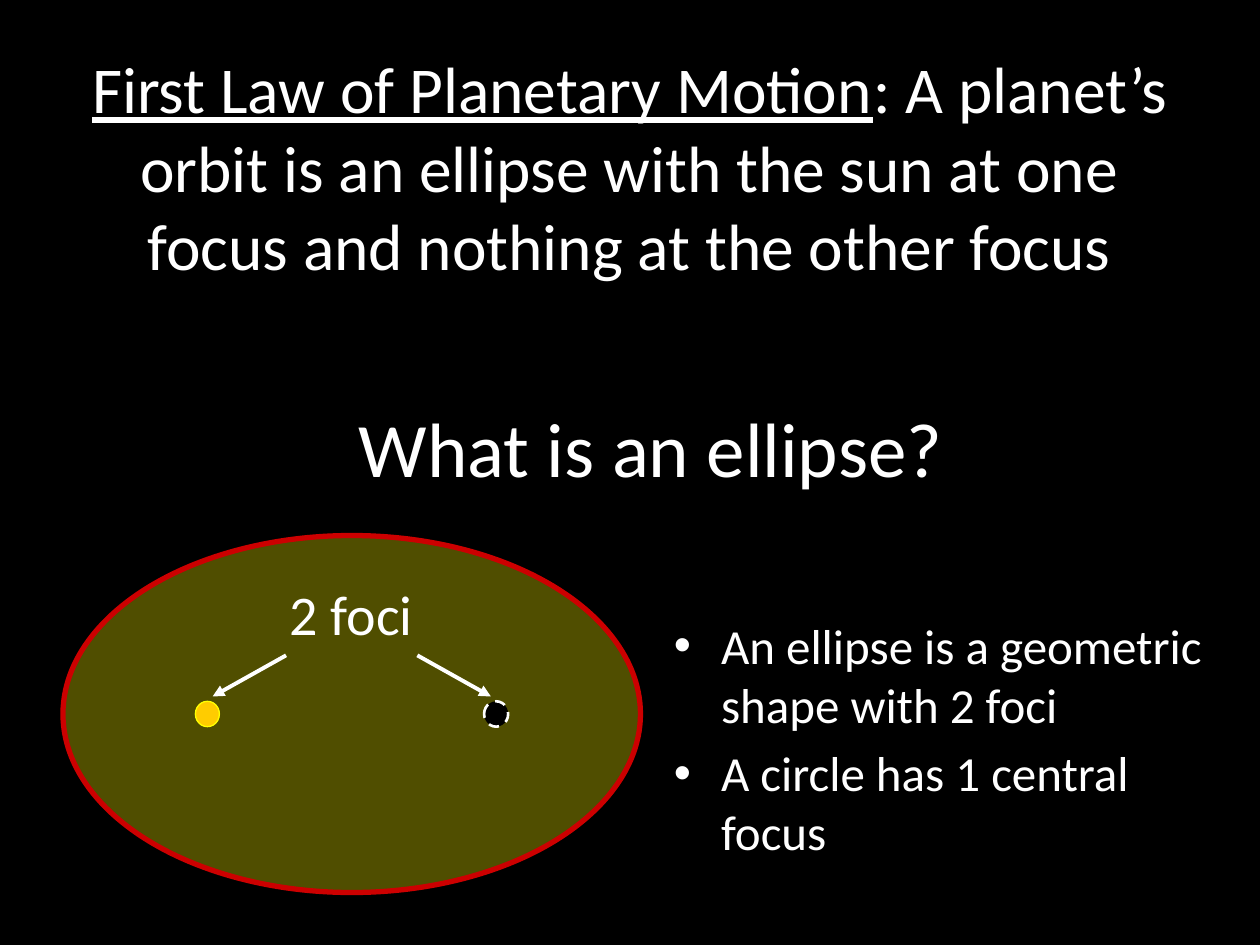
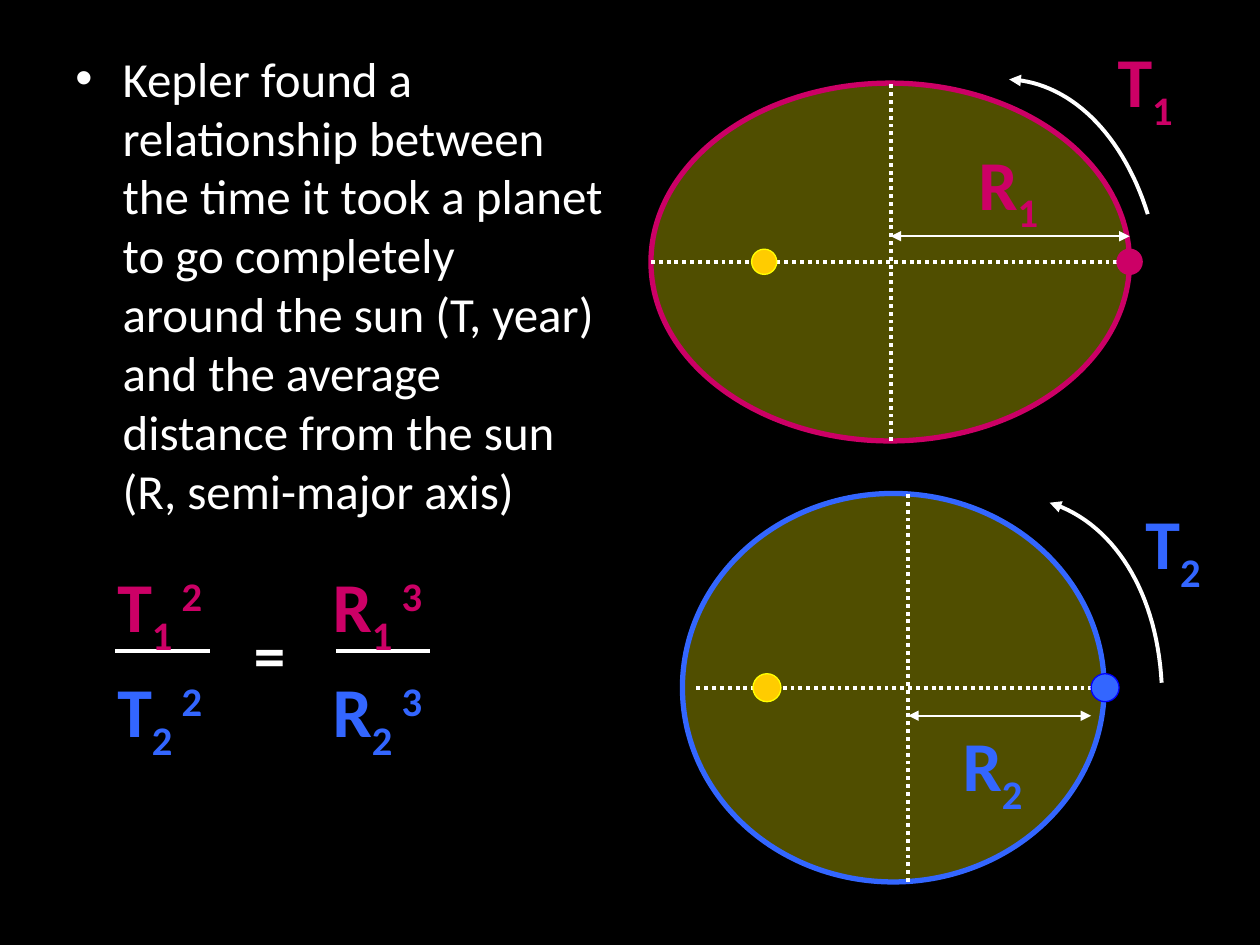
from lxml.etree import SubElement
from pptx import Presentation
from pptx.dml.color import RGBColor
from pptx.enum.dml import MSO_LINE
from pptx.enum.shapes import MSO_CONNECTOR as Link, MSO_SHAPE as Preset
from pptx.enum.text import MSO_ANCHOR as Anchor, PP_ALIGN as Align
from pptx.oxml.ns import qn
from pptx.util import Pt

COLORS = {
    "space": "000000", "white": "FFFFFF", "area": "A09C00", "ellipse": "CC0000",
    "sun": "FFCC00", "sun_edge": "FFFF00",
    "first": "CC0066", "second": "3366FF", "second_edge": "0000FF",
}
FONT = "Calibri"
SUB, SUPER = "-25000", "30000"
INDENT = 27
ARC_STEPS = 30


def rgb(name):
    return RGBColor.from_string(COLORS[name])


def decorate(shape, edge="white", width=2.25, fill=None, alpha=None, dash=None, ends=()):
    """Set outline, fill, dash and arrowheads, and take the shadow away."""
    line = shape.line
    line.color.rgb = rgb(edge)
    line.width = Pt(width)
    if dash:
        line.dash_style = dash
    for end in ends:
        SubElement(line._get_or_add_ln(), qn(f"a:{end}"), type="triangle")
    if hasattr(shape, "fill"):
        shape.shadow.inherit = False
        if fill:
            shape.fill.solid()
            shape.fill.fore_color.rgb = rgb(fill)
        else:
            shape.fill.background()
        if alpha:
            tint = shape.fill._xPr.find(qn("a:solidFill"))[0]
            SubElement(tint, qn("a:alpha"), val=str(alpha * 1000))
    else:
        SubElement(shape._element.spPr, qn("a:effectLst"))


deck = Presentation()
deck.slide_width, deck.slide_height = Pt(720), Pt(540)
pages = []
for number in range(2):
    page = deck.slides.add_slide(deck.slide_layouts[6])
    page.background.fill.solid()
    page.background.fill.fore_color.rgb = rgb("space")
    pages.append(page)
law_page, period_page = pages

# Filled areas of the three orbits
for page, edge, area in [
    (law_page, "ellipse", (36, 306, 330, 204)),
    (period_page, "second", (390, 282, 241, 222)),
    (period_page, "first", (372, 47.5, 273.5, 204.5)),
]:
    oval = page.shapes.add_shape(Preset.OVAL, *map(Pt, area))
    decorate(oval, edge, 3, "area", alpha=50)

# Axes, radius arrows, pointers to the foci and fraction bars
axis = {"dash": MSO_LINE.ROUND_DOT}
radius = {"width": 1, "ends": ("headEnd", "tailEnd")}
pointer = {"ends": ("tailEnd",)}
for page, points, look in [
    (law_page, (238.5, 374.5, 280.5, 398), pointer),
    (law_page, (163.5, 374.5, 121.5, 398), pointer),
    (period_page, (398, 393, 631.5, 393), axis),
    (period_page, (519, 504, 519, 282), axis),
    (period_page, (519, 409, 623.5, 409), radius),
    (period_page, (372, 149.8, 638.5, 149.8), axis),
    (period_page, (509, 252, 509, 47.5), axis),
    (period_page, (509, 135, 645.5, 135), radius),
    (period_page, (66, 372, 120, 372), {}),
    (period_page, (192, 372, 246, 372), {}),
]:
    line = page.shapes.add_connector(Link.STRAIGHT, *map(Pt, points))
    decorate(line, **look)

# Foci and planets: centre, width, height
for page, x, y, width, height, look in [
    (law_page, 118.5, 408, 13.75, 14.5, ("sun_edge", 0.75, "sun")),
    (law_page, 283.5, 408, 13.75, 14.5, ("white", 1.5, "space", None, MSO_LINE.DASH)),
    (period_page, 438.3, 393, 16, 16, ("sun_edge", 0.75, "sun")),
    (period_page, 631.5, 393, 16, 16, ("second_edge", 0.75, "second")),
    (period_page, 436.7, 149.6, 14.4, 14.4, ("sun_edge", 0.75, "sun")),
    (period_page, 645.5, 149.6, 14.4, 14.4, ("first", 0.75, "first")),
]:
    dot = page.shapes.add_shape(
        Preset.OVAL, Pt(x - width / 2), Pt(y - height / 2), Pt(width), Pt(height))
    decorate(dot, *look)

# Direction of travel, each a cubic curve through four control points
for controls in [
    ((663.8, 390.2), (661, 338.4), (636.5, 298.8), (599.8, 287.3)),
    ((655.9, 122.4), (641.5, 76.3), (611.3, 46.8), (576.7, 45.4)),
]:
    curve = []
    for step in range(ARC_STEPS + 1):
        t = step / ARC_STEPS
        weights = ((1 - t) ** 3, 3 * t * (1 - t) ** 2, 3 * t * t * (1 - t), t ** 3)
        curve.append([Pt(sum(w * c[i] for w, c in zip(weights, controls))) for i in (0, 1)])
    builder = period_page.shapes.build_freeform(*curve[0], scale=1.0)
    builder.add_line_segments(curve[1:], close=False)
    decorate(builder.convert_to_shape(), ends=("tailEnd",))

# Text: page, area, paragraphs of (text, extra format) spans, look
bullet = {"size": 28, "bullet": True}
center = {"align": Align.CENTER, "anchor": Anchor.MIDDLE}
first = {"size": 40, "bold": True, "color": "first"}
second = first | {"color": "second"}
sub, raised = {"baseline": SUB}, {"baseline": SUPER}
texts = [
    (law_page, (36, 30, 648, 162), [[
        ("First Law of Planetary Motion", {"underline": True}),
        (": A planet’s orbit is an ellipse with the sun at one focus "
         "and nothing at the other focus", {})]],
     center | {"size": 37.4, "bottom": 36}),
    (law_page, (48, 210, 648, 90), [[("What is an ellipse?", {})]], center | {"size": 44}),
    (law_page, (378, 348, 318, 162), [
        [("An ellipse is a geometric shape with 2 foci", {})],
        [("A circle has 1 central focus", {})]], bullet),
    (law_page, (146, 327.5, 117, 56), [[("2 foci ", {})]], {"size": 32, "align": Align.CENTER}),
    (period_page, (36, 24, 318, 492), [[
        ("Kepler found a relationship between the time it took a planet to go completely "
         "around the sun (T, year) and the average distance from the sun "
         "(R, semi-major axis)", {})]], bullet),
    (period_page, (138, 348, 30, 51), [[("=", {})]], {"size": 36, "bold": True}),
]
for letter, digit, area, look in [
    ("R", "1", (552, 76.5, 72, 55.5), first),
    ("T", "1", (631.5, 18, 65, 55.5), first),
    ("R", "2", (543, 409, 81, 55.5), second),
    ("T", "2", (647.5, 282, 72.5, 55.5), second),
]:
    texts.append((period_page, area, [[(letter, {}), (digit, sub)]], look))
for digit, top, look in [("1", 318, first), ("2", 378, second)]:
    spans = [("T", {}), (f"{digit} ", sub), ("2", raised),
             ("\tR", {}), (f"{digit} ", sub), ("3", raised)]
    texts.append((period_page, (60, top, 246, 55.5), [spans], look | {"tab": 123}))

for page, area, paras, look in texts:
    frame = page.shapes.add_textbox(*map(Pt, area)).text_frame
    frame.word_wrap = True
    frame.vertical_anchor = look.get("anchor", Anchor.TOP)
    frame.margin_bottom = Pt(look.get("bottom", 3.6))
    for index, spans in enumerate(paras):
        para = frame.add_paragraph() if index else frame.paragraphs[0]
        para.alignment = look.get("align", Align.LEFT)
        if index:
            para.space_before = Pt(0.2 * look["size"])
        settings = para._p.get_or_add_pPr()
        if "bullet" in look:
            settings.set("marL", str(Pt(INDENT)))
            settings.set("indent", str(-Pt(INDENT)))
            SubElement(settings, qn("a:buFont"), typeface="Arial")
            SubElement(settings, qn("a:buChar"), char="•")
        if "tab" in look:
            tabs = SubElement(settings, qn("a:tabLst"))
            SubElement(tabs, qn("a:tab"), pos=str(Pt(look["tab"])), algn="l")
        for words, extra in spans:
            span = para.add_run()
            span.text = words
            span.font.color.rgb = rgb(look.get("color", "white"))
            values = {"name": FONT, "size": Pt(look["size"]), "bold": look.get("bold", False),
                      "underline": extra.get("underline", False)}
            for name, value in values.items():
                setattr(span.font, name, value)
            if "baseline" in extra:
                span.font._element.set("baseline", extra["baseline"])

deck.save("out.pptx")
